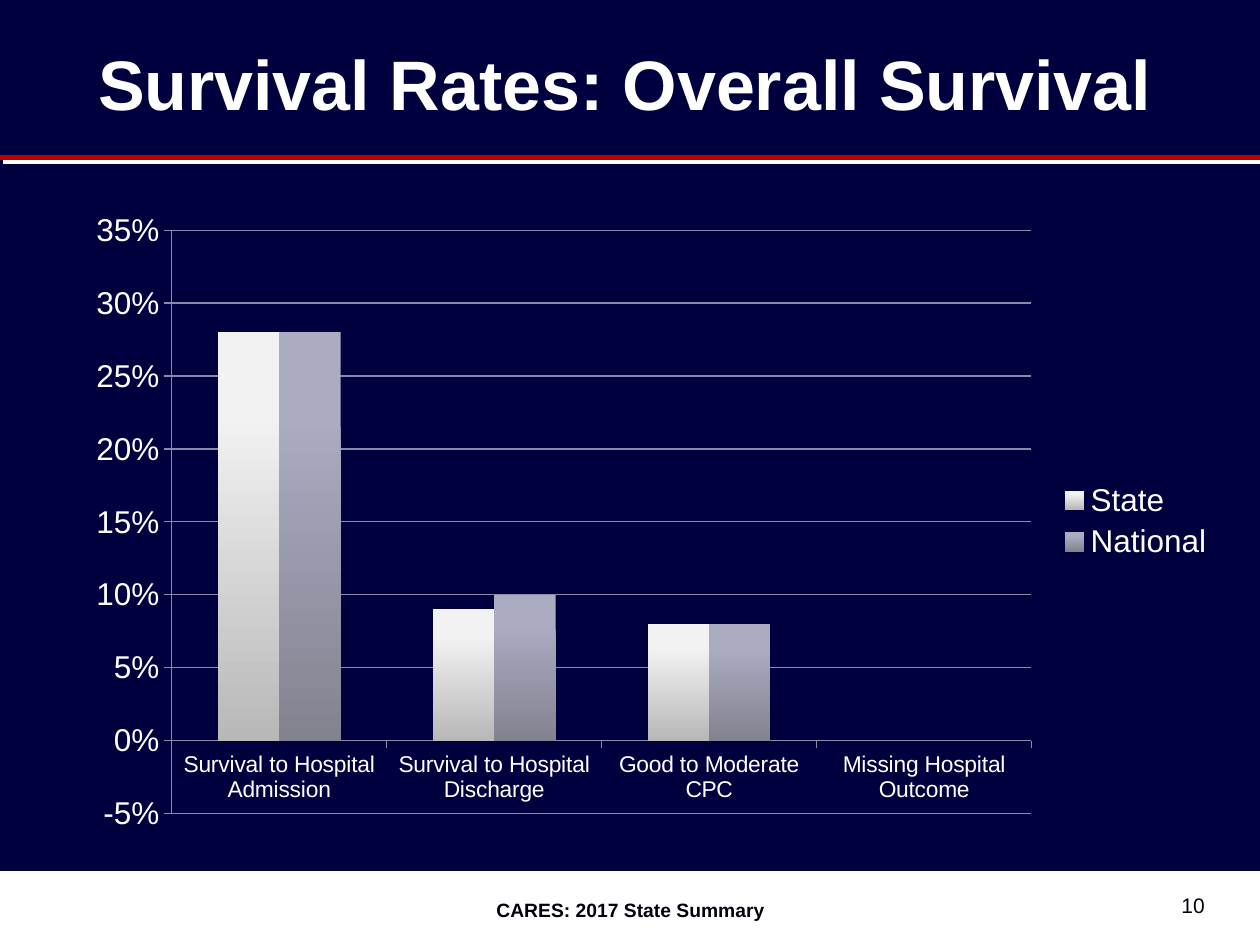
from lxml import etree
from pptx import Presentation
from pptx.chart.data import CategoryChartData
from pptx.dml.color import RGBColor
from pptx.enum.chart import XL_CHART_TYPE as ChartType, XL_LEGEND_POSITION as LegendPosition, XL_TICK_MARK as TickMark
from pptx.enum.shapes import MSO_CONNECTOR as Connector, MSO_SHAPE as Shape
from pptx.enum.text import MSO_ANCHOR as Anchor, PP_ALIGN as Align
from pptx.oxml import parse_xml
from pptx.oxml.ns import nsdecls, qn
from pptx.util import Inches, Pt

COLORS = {
    "navy": "00003E", "white": "FFFFFF", "ink": "00000C", "red": "C00000", "grid": "8A8AA8",
    "state_top": "F2F2F2", "state_bottom": "B8B8B8",
    "national_top": "ABABC2", "national_bottom": "838390",
}
FONT = "Arial"
WIDTH, HEIGHT = 10, 7.5
RULE_TOP = HEIGHT / 6
FOOTER_TOP = 6.92


def color(name):
    return RGBColor.from_string(COLORS[name])


def add_text(text, left, top, width, height, size, fill="ink", bold=False,
             align=Align.CENTER, anchor=Anchor.TOP):
    box = slide.shapes.add_textbox(Inches(left), Inches(top), Inches(width), Inches(height))
    frame = box.text_frame
    frame.word_wrap = True
    frame.vertical_anchor = anchor
    paragraph = frame.paragraphs[0]
    paragraph.text = text
    paragraph.alignment = align
    font = paragraph.runs[0].font
    font.name, font.size, font.bold = FONT, Pt(size), bold
    font.color.rgb = color(fill)


presentation = Presentation()
presentation.slide_width, presentation.slide_height = Inches(WIDTH), Inches(HEIGHT)
slide = presentation.slides.add_slide(presentation.slide_layouts[6])
slide.background.fill.solid()
slide.background.fill.fore_color.rgb = color("navy")

# Footer
footer = slide.shapes.add_shape(Shape.RECTANGLE, 0, Inches(FOOTER_TOP),
                                Inches(WIDTH), Inches(HEIGHT - FOOTER_TOP))
footer.shadow.inherit = False
footer.fill.solid()
footer.fill.fore_color.rgb = color("white")
footer.line.color.rgb = color("white")
footer.line.width = Pt(0.75)
add_text("CARES: 2017 State Summary", 3.42, 7.08, 3.17, 0.29, 11, bold=True)
add_text("10", 7.33, 7, 2.33, 0.33, 12, align=Align.RIGHT, anchor=Anchor.BOTTOM)

# Title and its rule
add_text("Survival Rates: Overall Survival", 0.13, 0.03, 9.66, 1.25, 40,
         fill="white", bold=True, anchor=Anchor.MIDDLE)
rule = slide.shapes.add_connector(Connector.STRAIGHT, 0, Inches(RULE_TOP),
                                  Inches(WIDTH), Inches(RULE_TOP))
rule.line.color.rgb = color("red")
rule.line.width = Pt(3)
rule._element.spPr.append(parse_xml(
    f'<a:effectLst {nsdecls("a")}><a:outerShdw dist="{Pt(2.8)}" dir="2700000" algn="ctr" rotWithShape="0">'
    f'<a:srgbClr val="{COLORS["white"]}"/></a:outerShdw></a:effectLst>'))

# Chart
data = CategoryChartData(number_format="0%")
data.categories = ["Survival to Hospital Admission", "Survival to Hospital Discharge",
                   "Good to Moderate CPC", "Missing Hospital Outcome"]
data.add_series("State", [0.28, 0.09, 0.08, 0])
data.add_series("National", [0.28, 0.1, 0.08, 0])
chart = slide.shapes.add_chart(ChartType.COLUMN_CLUSTERED, Inches(0.58), Inches(1.58),
                               Inches(9.16), Inches(5.11), data).chart
chart.has_title = False
chart.font.name, chart.font.size = FONT, Pt(18)
chart.font.color.rgb = color("white")
chart.has_legend = True
chart.legend.position = LegendPosition.RIGHT
chart.legend.include_in_layout = False

plot = chart.plots[0]
plot.gap_width, plot.overlap = 150, 0
plot.vary_by_categories = False
for series, name in zip(plot.series, ("state", "national")):
    series.invert_if_negative = False
    fill = series.format.fill
    fill.gradient()
    fill.gradient_angle = 270
    for stop, position, end in zip(fill.gradient_stops, (0.2, 1), ("top", "bottom")):
        stop.position = position
        stop.color.rgb = color(f"{name}_{end}")

value_axis, category_axis = chart.value_axis, chart.category_axis
value_axis.minimum_scale, value_axis.maximum_scale, value_axis.major_unit = -0.05, 0.35, 0.05
value_axis.has_major_gridlines = True
value_axis.tick_labels.number_format = "0%"
value_axis.tick_labels.number_format_is_linked = False
category_axis.tick_labels.font.size = Pt(13)
for axis in (value_axis, category_axis):
    axis.major_tick_mark = TickMark.OUTSIDE
for lines in (value_axis, category_axis, value_axis.major_gridlines):
    lines.format.line.color.rgb = color("grid")
    lines.format.line.width = Pt(0.75)

# Fixed inner plot area, as shares of the chart's size
plot_area = chart._chartSpace.chart.plotArea
for old_layout in plot_area.findall(qn("c:layout")):
    plot_area.remove(old_layout)
layout = parse_xml(f'<c:layout {nsdecls("c")}><c:manualLayout/></c:layout>')
settings = {"layoutTarget": "inner", "xMode": "edge", "yMode": "edge",
            "x": 0.0855, "y": 0.0485, "w": 0.745, "h": 0.906}
for tag, value in settings.items():
    etree.SubElement(layout[0], qn(f"c:{tag}")).set("val", str(value))
plot_area.insert(0, layout)

presentation.save("out.pptx")
